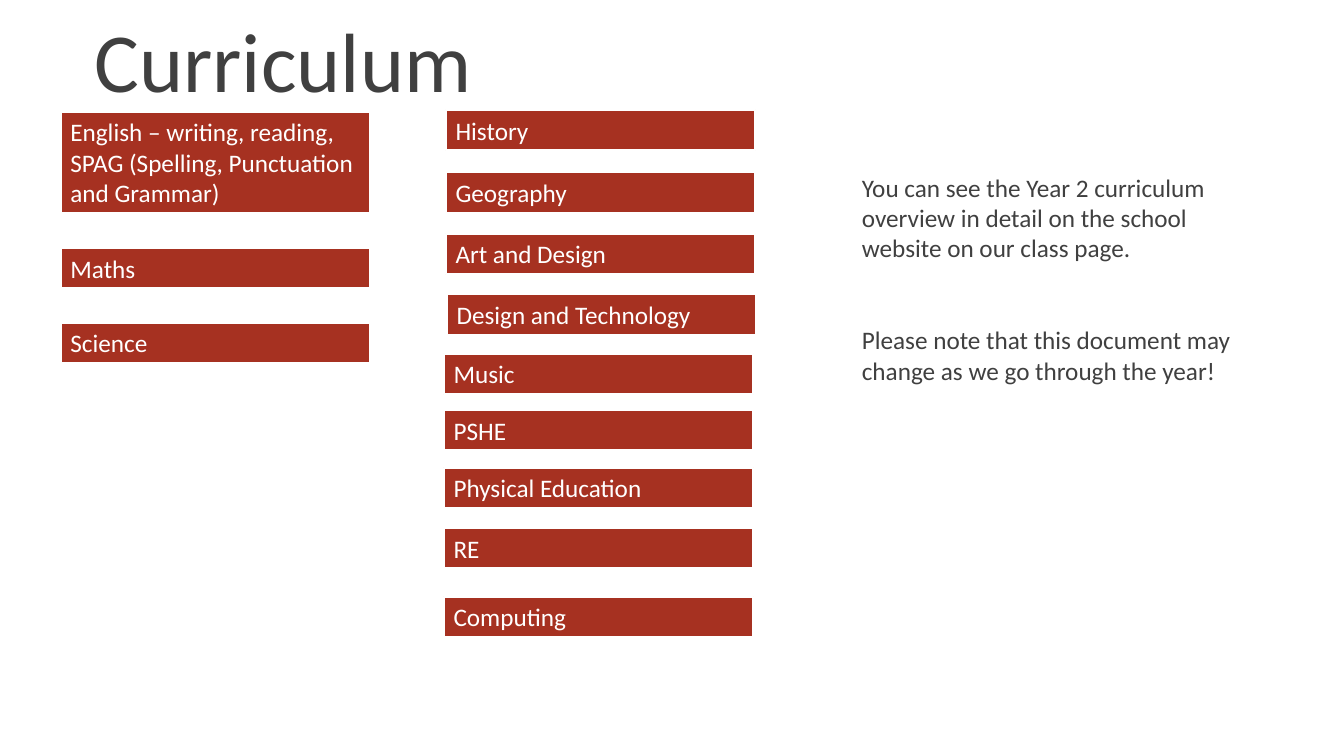
from pptx import Presentation
from pptx.dml.color import RGBColor
from pptx.enum.shapes import MSO_SHAPE
from pptx.enum.text import MSO_ANCHOR, MSO_AUTO_SIZE, PP_ALIGN
from pptx.util import Pt

RECT = MSO_SHAPE.RECTANGLE
TOP, BOTTOM = MSO_ANCHOR.TOP, MSO_ANCHOR.BOTTOM
GROW, FIXED = MSO_AUTO_SIZE.SHAPE_TO_FIT_TEXT, MSO_AUTO_SIZE.NONE
LEFT = PP_ALIGN.LEFT

PX = 9144  # EMU per px, 100 px to the inch
SIZE = (1333, 750)

TITLE = "Curriculum"
TITLE_BOX = (84, -3, 433, 118)

# Subject, left, top, lines of text
SUBJECTS = [
    ("English – writing, reading, SPAG (Spelling, Punctuation and Grammar)",
     60, 111, 3),
    ("Maths", 60, 246, 1),
    ("Science", 60, 320, 1),
    ("History", 442, 109, 1),
    ("Geography", 442, 171, 1),
    ("Art and Design", 442, 232, 1),
    ("Design and Technology", 443, 292, 1),
    ("Music", 440, 351, 1),
    ("PSHE", 440, 407, 1),
    ("Physical Education", 440, 464, 1),
    ("RE", 440, 524, 1),
    ("Computing", 440, 592, 1),
]
CARD_WIDTH = 307
LINE_HEIGHT, CARD_PAD = 30, 10

NOTES = [
    "You can see the Year 2 curriculum overview in detail on the school "
    "website on our class page.",
    "Please note that this document may change as we go through the year!",
]
NOTES_BOX = (845, 166, 396, 222)

THEME = {
    "font": "Calibri",
    "title": Pt(60),
    "body": Pt(18),
    "gap": Pt(44),
    "edge": Pt(1.5),
    "red": RGBColor.from_string("A63121"),
    "dark": RGBColor.from_string("404040"),
    "white": RGBColor.from_string("FFFFFF"),
}


def scale(box):
    """Turn px lengths into EMU."""
    return [n * PX for n in box]


def write(frame, texts, size, color, anchor=TOP, fit=GROW, spacing=None):
    """Fill a text frame, one paragraph for each text."""
    frame.word_wrap = True
    frame.auto_size = fit
    frame.vertical_anchor = anchor
    for i, text in enumerate(texts):
        para = frame.add_paragraph() if i else frame.paragraphs[0]
        para.alignment = LEFT
        if spacing:
            para.line_spacing = spacing
        if i:
            para.space_before = THEME["gap"]
        run = para.add_run()
        run.text = text
        run.font.name = THEME["font"]
        run.font.size = size
        run.font.color.rgb = color


def add_card(slide, text, left, top, lines):
    height = lines * LINE_HEIGHT + CARD_PAD
    card = slide.shapes.add_shape(
        RECT, *scale((left, top, CARD_WIDTH, height)))
    card.shadow.inherit = False
    card.fill.solid()
    card.fill.fore_color.rgb = THEME["red"]
    card.line.color.rgb = THEME["white"]
    card.line.width = THEME["edge"]
    write(card.text_frame, [text], THEME["body"], THEME["white"])


def main():
    deck = Presentation()
    deck.slide_width, deck.slide_height = scale(SIZE)
    slide = deck.slides.add_slide(deck.slide_layouts[6])

    title = slide.shapes.add_textbox(*scale(TITLE_BOX))
    write(title.text_frame, [TITLE], THEME["title"], THEME["dark"],
          BOTTOM, FIXED, 0.9)
    for subject in SUBJECTS:
        add_card(slide, *subject)
    notes = slide.shapes.add_textbox(*scale(NOTES_BOX))
    write(notes.text_frame, NOTES, THEME["body"], THEME["dark"])

    deck.save("out.pptx")


if __name__ == "__main__":
    main()
